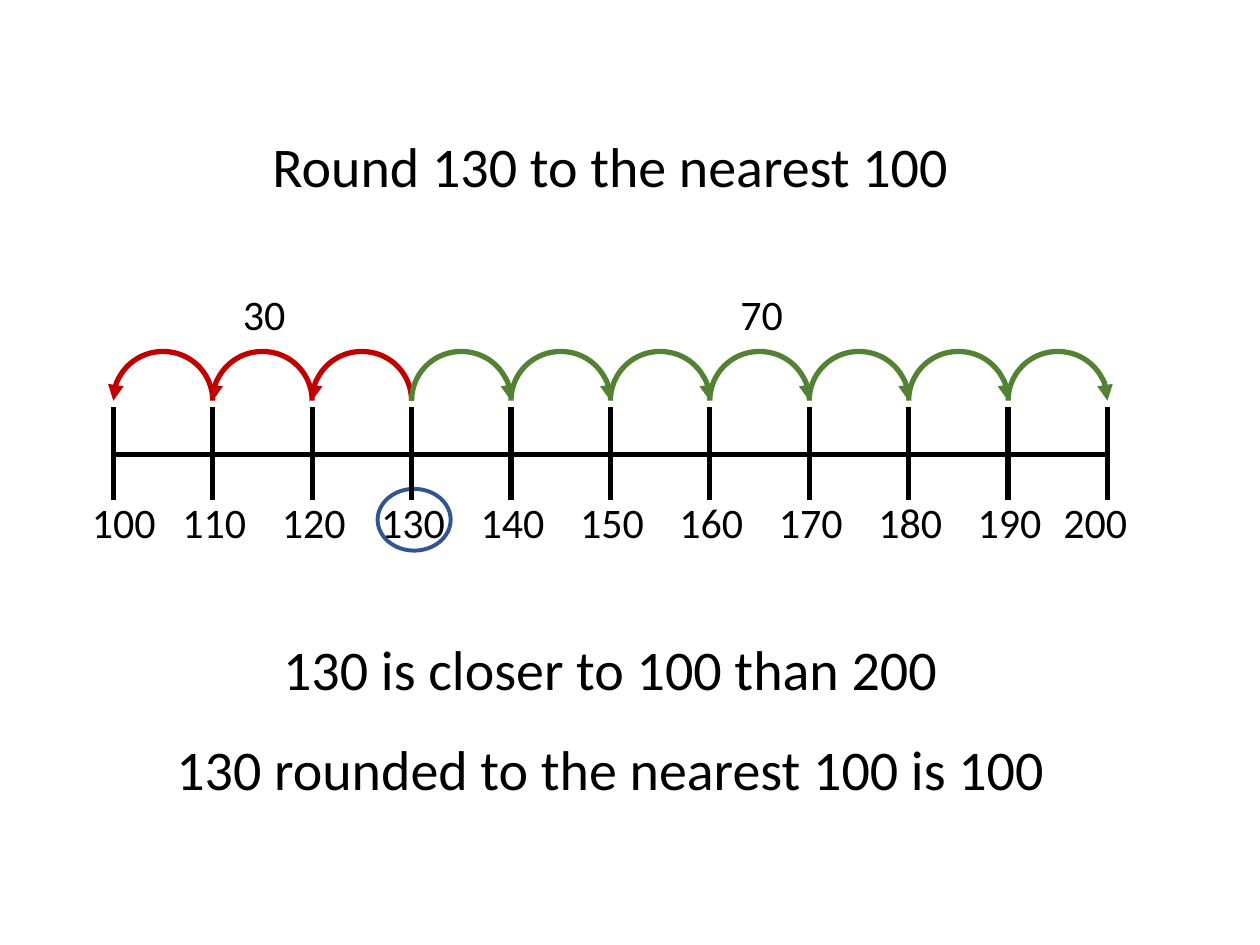
from dataclasses import dataclass

import pptx
import pptx.dml.color
import pptx.enum.shapes
import pptx.enum.text
import pptx.oxml
import pptx.oxml.ns
import pptx.util
from pptx.util import Inches

SHAPES = pptx.enum.shapes.MSO_SHAPE
ALIGN = pptx.enum.text.PP_ALIGN


@dataclass(frozen=True)
class Theme:
    font: str = "Calibri"
    ink: str = "000000"
    back_jump: str = "C00000"
    forward_jump: str = "548235"
    ring: str = "325491"
    statement_size: int = 32
    label_size: int = 24
    line_width: float = 3
    ring_width: float = 2.25


THEME = Theme()


@dataclass(frozen=True)
class Box:
    left: float
    top: float
    width: float
    height: float

    def lengths(self):
        return [Inches(v) for v in (self.left, self.top, self.width, self.height)]


def style_line(shape, color, width):
    shape.line.color.rgb = pptx.dml.color.RGBColor.from_string(color)
    shape.line.width = pptx.util.Pt(width)


def write_text(shape, text, size, align):
    frame = shape.text_frame
    frame.word_wrap = True
    frame.auto_size = pptx.enum.text.MSO_AUTO_SIZE.SHAPE_TO_FIT_TEXT
    frame.vertical_anchor = pptx.enum.text.MSO_ANCHOR.TOP
    paragraph = frame.paragraphs[0]
    paragraph.alignment = align
    run = paragraph.add_run()
    run.text = text
    run.font.name = THEME.font
    run.font.size = pptx.util.Pt(size)
    run.font.color.rgb = pptx.dml.color.RGBColor.from_string(THEME.ink)


def add_text(slide, box, text, size, align):
    write_text(slide.shapes.add_textbox(*box.lengths()), text, size, align)


def add_outline(slide, kind, box, color, width):
    shape = slide.shapes.add_shape(kind, *box.lengths())
    shape.shadow.inherit = False
    shape.fill.background()
    style_line(shape, color, width)
    return shape


def add_rule(group, x1, y1, x2, y2):
    rule = group.shapes.add_connector(
        pptx.enum.shapes.MSO_CONNECTOR.STRAIGHT,
        Inches(x1), Inches(y1), Inches(x2), Inches(y2))
    style_line(rule, THEME.ink, THEME.line_width)
    properties = rule.element.spPr
    properties.append(pptx.oxml.parse_xml(
        f'<a:effectLst {pptx.oxml.ns.nsdecls("a")}/>'))


def add_title(slide, box, text):
    title = slide.shapes.title
    title.left, title.top, title.width, title.height = box.lengths()
    write_text(title, text, THEME.statement_size, ALIGN.CENTER)


def add_jump(slide, box, forward):
    """Draw a half-circle arrow that fills the box, pointing right or left."""
    # The bracket is drawn upright around the same centre, then turned
    upright = Box(box.left + (box.width - box.height) / 2,
                  box.top + (box.height - box.width) / 2,
                  box.height, box.width)
    color = THEME.forward_jump if forward else THEME.back_jump
    jump = add_outline(slide, SHAPES.RIGHT_BRACKET, upright, color, THEME.line_width)
    jump.adjustments[0] = 1.0
    jump.rotation = 270 if forward else 90
    if not forward:
        jump.element.spPr.find(pptx.oxml.ns.qn("a:xfrm")).set("flipH", "1")
    jump.line._get_or_add_ln().append(pptx.oxml.parse_xml(
        f'<a:tailEnd {pptx.oxml.ns.nsdecls("a")} type="triangle"/>'))


def add_number_line(slide, box, values, marked):
    """Place jumps, labels and ticks; the box spans the ticks."""
    step = box.width / (len(values) - 1)
    ticks = [box.left + i * step for i in range(len(values))]
    start = values.index(marked)

    # Ring around the number to be rounded
    add_outline(slide, SHAPES.OVAL, Box(ticks[start] - 0.27, box.top + 0.65, 0.58, 0.49),
                THEME.ring, THEME.ring_width)

    # Jumps away from the marked number
    for i, x in enumerate(ticks[:-1]):
        add_jump(slide, Box(x, box.top - 0.44, step, 0.39), forward=i >= start)

    # Distance to each end
    label_width, label_height = 0.89, 0.5
    for x, end in ((ticks[0] + 0.93, values[0]), (ticks[start] + 2.51, values[-1])):
        add_text(slide, Box(x, box.top - 0.99, label_width, label_height),
                 str(abs(end - marked)), THEME.label_size, ALIGN.LEFT)

    # Tick labels, with the end ones drawn inwards
    nudges = {values[0]: 0.07, values[-1]: -0.11}
    for x, value in zip(ticks, values):
        left = x - 0.34 + nudges.get(value, 0)
        add_text(slide, Box(left, box.top + 0.66, label_width, label_height),
                 str(value), THEME.label_size, ALIGN.LEFT)

    # Axis and ticks
    axis = slide.shapes.add_group_shape()
    middle = box.top + 0.38
    add_rule(axis, ticks[0], middle, ticks[-1], middle)
    for x in ticks:
        add_rule(axis, x, box.top, x, box.top + box.height)


def add_statements(slide, box, statements, pitch):
    for i, statement in enumerate(statements):
        add_text(slide, Box(box.left, box.top + i * pitch, box.width, box.height),
                 statement, THEME.statement_size, ALIGN.CENTER)


def main():
    presentation = pptx.Presentation()
    presentation.slide_width = Inches(10)
    presentation.slide_height = Inches(7.5)
    slide = presentation.slides.add_slide(presentation.slide_layouts[5])

    add_title(slide, Box(0.73, 0.99, 8.23, 0.64), "Round 130 to the nearest 100")
    add_number_line(slide, Box(0.9, 3.23, 7.89, 0.74),
                    list(range(100, 201, 10)), marked=130)
    add_statements(slide, Box(0.73, 4.99, 8.23, 0.64),
                   ["130 is closer to 100 than 200",
                    "130 rounded to the nearest 100 is 100"], pitch=0.79)

    presentation.save("out.pptx")


if __name__ == "__main__":
    main()
